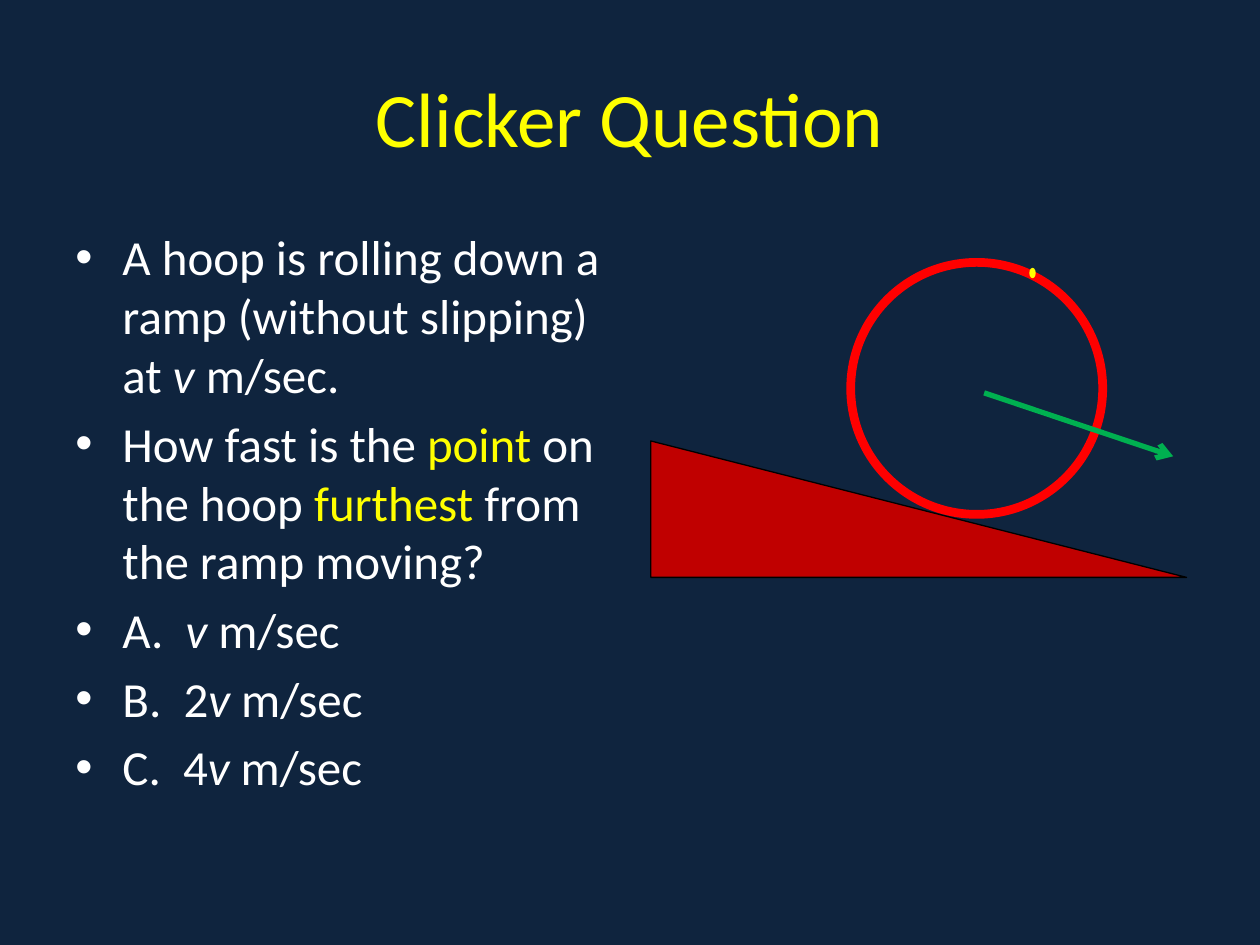
"""Build the clicker question slide about a hoop on a ramp."""
import pptx
import pptx.util
import pptx.dml.color
import pptx.enum.shapes
import pptx.enum.text
import pptx.oxml.ns
import lxml.etree

Cm, Pt = pptx.util.Cm, pptx.util.Pt
SHAPE = pptx.enum.shapes.MSO_SHAPE
ALIGN = pptx.enum.text.PP_ALIGN
ANCHOR = pptx.enum.text.MSO_ANCHOR
COLORS = {
    "night": "0F243E", "white": "FFFFFF", "yellow": "FFFF00", "ramp": "C00000",
    "hoop": "FF0000", "arrow": "00B050", "edge": "000000",
}
BODY = [
    [("A hoop is rolling down a ramp (without slipping) at ", {}),
     ("v", {"italic": True}), (" m/sec.", {})],
    [("How fast is the ", {}), ("point", {"color": "yellow"}), (" on the hoop ", {}),
     ("furthest ", {"color": "yellow"}), ("from the ramp moving?", {})],
]
CHOICES = ["A.  ", "B.  2", "C.  4"]


def rgb(name):
    return pptx.dml.color.RGBColor.from_string(COLORS[name])


def add_sub(parent, tag, **attrs):
    return lxml.etree.SubElement(parent, pptx.oxml.ns.qn(tag), attrs)


def place(item, box):
    item.left, item.top, item.width, item.height = (Cm(n) for n in box)


def add_run(para, text, size=28, color="white", italic=False):
    run = para.add_run()
    run.text = text
    font = run.font
    font.name, font.size, font.italic = "Calibri", Pt(size), italic
    font.color.rgb = rgb(color)


def add_title(slide, text, box):
    title = slide.shapes.title
    place(title, box)
    title.text_frame.vertical_anchor = ANCHOR.MIDDLE
    para = title.text_frame.paragraphs[0]
    para.alignment = ALIGN.CENTER
    add_run(para, text, size=44, color="yellow")


def add_list(slide, items, box):
    frame = slide.shapes.add_textbox(*(Cm(n) for n in box)).text_frame
    frame.word_wrap = True
    for num, runs in enumerate(items):
        para = frame.add_paragraph() if num else frame.paragraphs[0]
        para.alignment = ALIGN.LEFT
        para.space_before = Pt(5.6)
        props = para._p.get_or_add_pPr()
        props.set("marL", str(Cm(0.95)))
        props.set("indent", str(-Cm(0.95)))
        add_sub(props, "a:buFont", typeface="Arial")
        add_sub(props, "a:buChar", char="•")
        for text, style in runs:
            add_run(para, text, **style)


def add_form(slide, kind, box, fill=None, line=None, width=0.75):
    form = slide.shapes.add_shape(kind, *(Cm(n) for n in box))
    form.shadow.inherit = False
    if fill:
        form.fill.solid()
        form.fill.fore_color.rgb = rgb(fill)
    else:
        form.fill.background()
    if line:
        form.line.color.rgb = rgb(line)
        form.line.width = Pt(width)
    else:
        form.line.fill.background()


def add_arrow(slide, start, end, color, width):
    kind = pptx.enum.shapes.MSO_CONNECTOR.STRAIGHT
    arrow = slide.shapes.add_connector(kind, *(Cm(n) for n in start + end))
    arrow.line.color.rgb = rgb(color)
    arrow.line.width = Pt(width)
    add_sub(arrow.line._get_or_add_ln(), "a:tailEnd", type="arrow")
    add_sub(arrow._element.spPr, "a:effectLst")


def main():
    deck = pptx.Presentation()
    deck.slide_width, deck.slide_height = Cm(25.4), Cm(19.05)
    slide = deck.slides.add_slide(deck.slide_layouts[5])
    slide.background.fill.solid()
    slide.background.fill.fore_color.rgb = rgb("night")

    add_title(slide, "Clicker Question", (1.27, 0.76, 22.86, 3.18))
    answers = [[(lead, {}), ("v", {"italic": True}), (" m/sec", {})] for lead in CHOICES]
    add_list(slide, BODY + answers, (1.27, 4.45, 11.23, 12.57))

    add_form(slide, SHAPE.RIGHT_TRIANGLE, (13.12, 8.89, 10.8, 2.75), fill="ramp", line="edge")
    add_form(slide, SHAPE.OVAL, (17.15, 5.29, 5.08, 5.08), line="hoop", width=5)
    add_arrow(slide, (19.84, 7.92), (23.65, 9.2), "arrow", 3)
    add_form(slide, SHAPE.OVAL, (20.75, 5.4, 0.13, 0.21), fill="yellow")
    deck.save("out.pptx")


if __name__ == "__main__":
    main()
